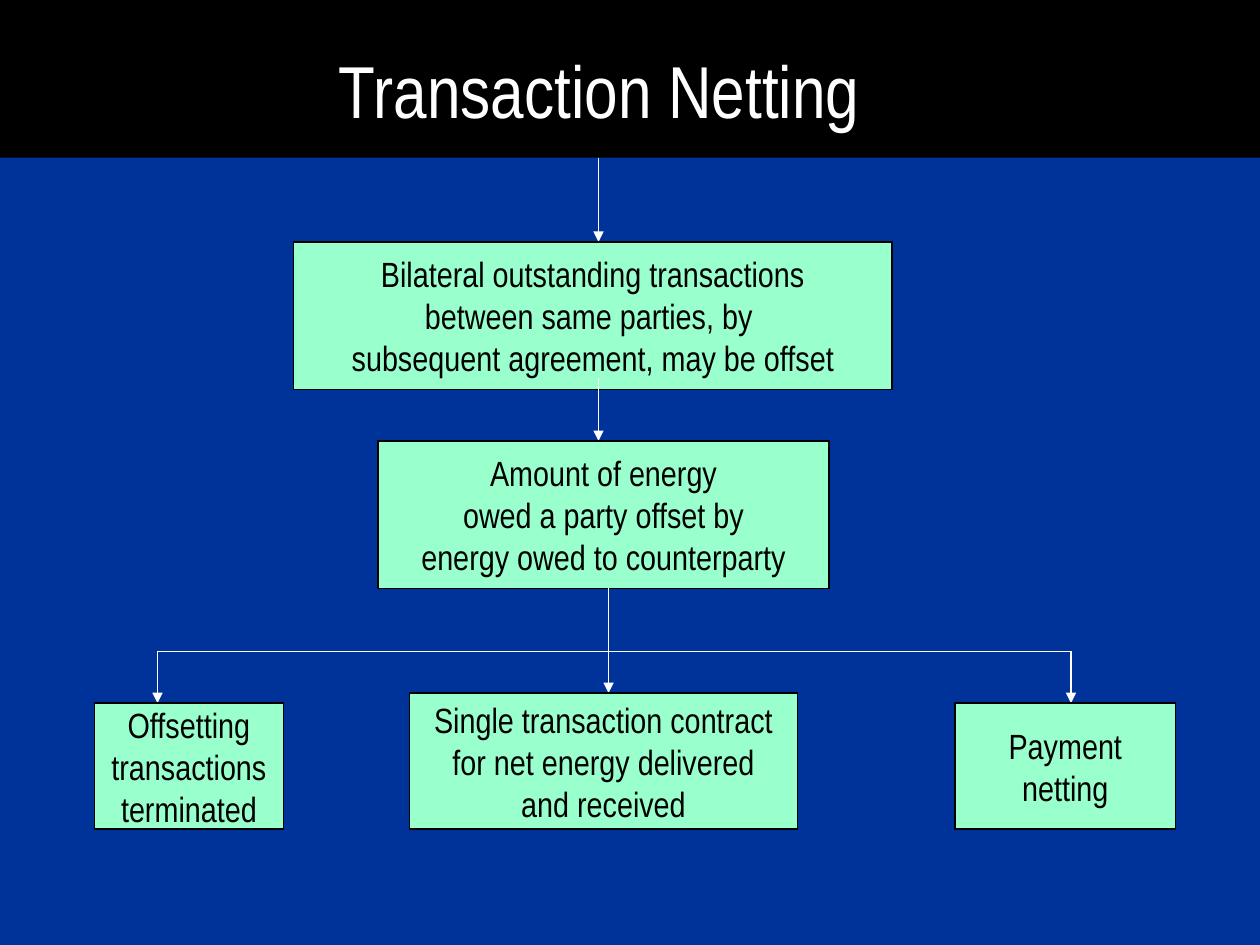
from dataclasses import dataclass

from lxml import etree
from pptx import Presentation
from pptx import util as u
from pptx.dml.color import RGBColor
from pptx.enum import shapes, text
from pptx.oxml import ns

COLORS = {"background": "003399", "header": "000000", "box": "99FFCC",
          "ink": "000000", "light": "FFFFFF"}
FONT = "Arial Narrow"
LINE_WIDTH = u.Pt(0.75)


@dataclass
class Box:
    left: float
    top: float
    width: float
    height: float
    lines: tuple[str, ...] = ()


@dataclass
class Arrow:
    x: float
    top: float
    neck: float  # where the arrowhead segment starts
    bottom: float


def color(name: str) -> RGBColor:
    return RGBColor.from_string(COLORS[name])


def add_rectangle(slide, box: Box, fill: str, outline: str | None = None):
    shape = slide.shapes.add_shape(
        shapes.MSO_SHAPE.RECTANGLE, u.Inches(box.left), u.Inches(box.top),
        u.Inches(box.width), u.Inches(box.height))
    shape.shadow.inherit = False
    shape.fill.solid()
    shape.fill.fore_color.rgb = color(fill)
    if outline:
        shape.line.color.rgb = color(outline)
        shape.line.width = LINE_WIDTH
    else:
        shape.line.fill.background()
    return shape


def write_lines(shape, lines: tuple[str, ...], size: float, ink: str,
                spacing: float | None = None) -> None:
    frame = shape.text_frame
    frame.word_wrap = False
    frame.vertical_anchor = text.MSO_ANCHOR.MIDDLE
    for index, line in enumerate(lines):
        paragraph = frame.add_paragraph() if index else frame.paragraphs[0]
        paragraph.alignment = text.PP_ALIGN.CENTER
        paragraph.line_spacing = spacing
        run = paragraph.add_run()
        run.text = line
        run.font.name = FONT
        run.font.size = u.Pt(size)
        run.font.color.rgb = color(ink)


def add_line(slide, x1: float, y1: float, x2: float, y2: float,
             arrowhead: bool = False) -> None:
    connector = slide.shapes.add_connector(
        shapes.MSO_CONNECTOR.STRAIGHT,
        u.Inches(x1), u.Inches(y1), u.Inches(x2), u.Inches(y2))
    connector.line.color.rgb = color("light")
    connector.line.width = LINE_WIDTH
    if arrowhead:
        etree.SubElement(connector.line._get_or_add_ln(), ns.qn("a:tailEnd"),
                         type="triangle")
    etree.SubElement(connector._element.spPr, ns.qn("a:effectLst"))


def add_arrow(slide, arrow: Arrow) -> None:
    add_line(slide, arrow.x, arrow.top, arrow.x, arrow.neck)
    add_line(slide, arrow.x, arrow.neck, arrow.x, arrow.bottom, arrowhead=True)


def add_box(slide, box: Box) -> None:
    write_lines(add_rectangle(slide, box, "box", "ink"), box.lines, 20, "ink")


HEADER = Box(0, 0, 10, 1.5)
HEADER_COVER = Box(0, 1.25, 10, 0.58)
TITLE = Box(1.42, 0.25, 6.67, 1, ("Transaction Netting",))

BRANCH_Y = 5.17
BRANCH_STOPS = (1.25, 5.5, 8.5)

STEPS = (
    Box(2.33, 1.92, 4.75, 1.17, ("Bilateral outstanding transactions",
                                 "between same parties, by ",
                                 "subsequent agreement, may be offset")),
    Box(3, 3.5, 3.58, 1.17, ("Amount of energy", "owed a party offset by",
                             "energy owed to counterparty")),
)
OUTCOMES = (
    Box(0.75, 5.58, 1.5, 1, ("Offsetting", "transactions", "terminated")),
    Box(3.25, 5.5, 3.08, 1.08, ("Single transaction contract",
                                "for net energy delivered", "and received")),
    Box(7.58, 5.58, 1.75, 1, ("Payment", "netting")),
)
STEP_ARROWS = (Arrow(4.75, 1.25, 1.83, 1.92), Arrow(4.75, 3, 3.42, 3.5))
OUTCOME_ARROWS = (
    Arrow(1.25, BRANCH_Y, 5.5, 5.58),
    Arrow(4.83, BRANCH_Y, 5.42, 5.5),
    Arrow(8.5, BRANCH_Y, 5.5, 5.58),
)


def main() -> None:
    presentation = Presentation()
    presentation.slide_width = u.Inches(10)
    presentation.slide_height = u.Inches(7.5)
    slide = presentation.slides.add_slide(presentation.slide_layouts[6])

    # Background and header band
    slide.background.fill.solid()
    slide.background.fill.fore_color.rgb = color("background")
    add_rectangle(slide, HEADER, "header", "header")
    add_rectangle(slide, HEADER_COVER, "background")

    # Steps, each entered by an arrow from above
    for arrow, box in zip(STEP_ARROWS, STEPS):
        add_arrow(slide, arrow)
        add_box(slide, box)

    # Branch from the last step to the outcomes
    add_line(slide, 4.83, 4.67, 4.83, BRANCH_Y)
    for start, end in zip(BRANCH_STOPS, BRANCH_STOPS[1:]):
        add_line(slide, start, BRANCH_Y, end, BRANCH_Y)
    for arrow in OUTCOME_ARROWS:
        add_arrow(slide, arrow)
    for box in OUTCOMES:
        add_box(slide, box)

    # Title
    title = slide.shapes.add_textbox(
        u.Inches(TITLE.left), u.Inches(TITLE.top),
        u.Inches(TITLE.width), u.Inches(TITLE.height))
    write_lines(title, TITLE.lines, 42, "light", spacing=0.9)

    presentation.save("out.pptx")


if __name__ == "__main__":
    main()
